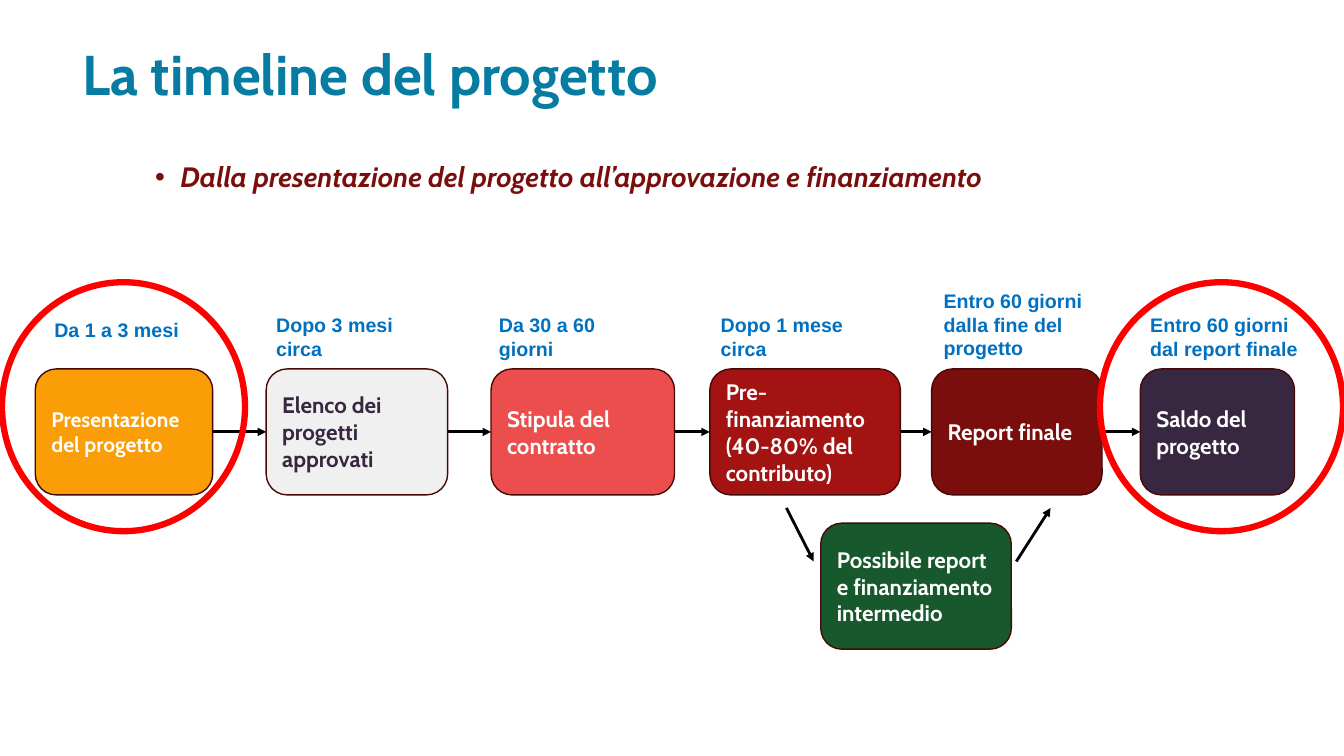
import pptx
import pptx.util
import pptx.dml.color
import pptx.enum.shapes
import pptx.enum.text
import pptx.oxml.xmlchemy

Inches = pptx.util.Inches
Pt = pptx.util.Pt
SHAPE = pptx.enum.shapes.MSO_SHAPE
ANCHOR = pptx.enum.text.MSO_ANCHOR

COLORS = {
    "title": "067CA2", "crimson": "7A0E0D", "orange": "FA9D06", "grey": "F1F0F0",
    "coral": "EB4E4D", "red": "A31312", "plum": "372741", "green": "17582C",
    "white": "FFFFFF", "outline": "470808", "label": "0070C0", "arrow": "000000",
    "ring": "FF0000",
}

TITLE = "La timeline del progetto"
SUBTITLE = "Dalla presentazione del progetto all’approvazione e finanziamento"

STEPS = [
    (["Presentazione del progetto"], 0.35, 1.76, "orange", "white", 15),
    (["Elenco dei progetti approvati"], 2.64, 1.8, "grey", "plum", 16),
    (["Stipula del contratto"], 4.87, 1.82, "coral", "white", 16),
    (["Pre-", "finanziamento (40-80% del contributo)"], 7.04, 1.89, "red", "white", 16),
    (["Report finale"], 9.24, 1.69, "crimson", "white", 16),
    (["Saldo del progetto"], 11.31, 1.53, "plum", "white", 16),
]
INTERIM = (["Possibile report e finanziamento intermedio"], 8.14, 1.89, "green", "white", 16)
TIMINGS = [
    ("Da 1 a 3 mesi", 0.44, 3.45, 1),
    ("Dopo 3 mesi circa", 2.64, 3.64, 2),
    ("Da 30 a 60 giorni", 4.85, 3.64, 2),
    ("Dopo 1 mese circa", 7.05, 3.64, 2),
    ("Entro 60 giorni dalla fine del progetto", 9.26, 3.64, 3),
    ("Entro 60 giorni dal report finale", 11.31, 3.64, 2),
]
DETOUR = [((7.8, 5.04), (8.07, 5.57)), ((10.08, 5.57), (10.42, 5.04))]
RING_LEFTS = [0.02, 10.91]

STEP_TOP, INTERIM_TOP, STEP_HEIGHT = 3.66, 5.19, 1.25
TIMING_WIDTH, TIMING_LINE, TIMING_PADDING = 1.69, 0.24, 0.1
RING_TOP, RING_WIDTH, RING_HEIGHT = 2.8, 2.41, 2.47

TITLE_FONT = {"name": "Cabin", "size": Pt(40), "bold": True}
SUBTITLE_FONT = {"name": "Cabin", "size": Pt(20), "bold": True, "italic": True}
TIMING_FONT = {"name": "Arial", "size": Pt(14), "bold": True}


def rgb(color):
    return pptx.dml.color.RGBColor.from_string(COLORS[color])


def element(tag, **attributes):
    made = pptx.oxml.xmlchemy.OxmlElement(tag)
    for key, value in attributes.items():
        made.set(key, value)
    return made


def write(frame, lines, font, color, anchor):
    frame.word_wrap = True
    frame.vertical_anchor = anchor
    for index, line in enumerate(lines):
        paragraph = frame.paragraphs[0] if index == 0 else frame.add_paragraph()
        paragraph.alignment = pptx.enum.text.PP_ALIGN.LEFT
        run = paragraph.add_run()
        run.text = line
        for key, value in font.items():
            setattr(run.font, key, value)
        run.font.color.rgb = rgb(color)


def add_text(slide, box, text, font, color, anchor=ANCHOR.TOP):
    frame = slide.shapes.add_textbox(*map(Inches, box)).text_frame
    write(frame, [text], font, color, anchor)
    return frame.paragraphs[0]


def add_outlined(slide, kind, box, color, width):
    shape = slide.shapes.add_shape(kind, *map(Inches, box))
    shape.shadow.inherit = False
    shape.line.color.rgb = rgb(color)
    shape.line.width = Pt(width)
    return shape


def add_step(slide, step, top):
    lines, left, width, fill, ink, size = step
    box = (left, top, width, STEP_HEIGHT)
    shape = add_outlined(slide, SHAPE.ROUNDED_RECTANGLE, box, "outline", 1)
    shape.fill.solid()
    shape.fill.fore_color.rgb = rgb(fill)
    font = {"name": "Cabin", "size": Pt(size), "bold": True}
    write(shape.text_frame, lines, font, ink, ANCHOR.MIDDLE)


def add_arrow(slide, start, end):
    arrow = slide.shapes.add_connector(
        pptx.enum.shapes.MSO_CONNECTOR.STRAIGHT, *map(Inches, start + end))
    arrow.line.color.rgb = rgb("arrow")
    arrow.line.width = Pt(2)
    arrow.get_or_add_ln().append(element("a:tailEnd", type="triangle"))
    arrow._element.spPr.append(element("a:effectLst"))


def add_bullet(paragraph):
    properties = paragraph._p.get_or_add_pPr()
    properties.set("marL", str(Inches(0.25)))
    properties.set("indent", str(Inches(-0.25)))
    properties.append(element("a:buFont", typeface="Arial"))
    properties.append(element("a:buChar", char="•"))


def main():
    deck = pptx.Presentation()
    deck.slide_width, deck.slide_height = Inches(13.33), Inches(7.5)
    slide = deck.slides.add_slide(deck.slide_layouts[6])

    heading = add_text(slide, (0.72, 0.41, 11.58, 0.71), TITLE, TITLE_FONT, "title", ANCHOR.MIDDLE)
    subtitle = add_text(slide, (1.44, 1.57, 10, 0.57), SUBTITLE, SUBTITLE_FONT, "crimson")
    add_bullet(subtitle)
    for paragraph in (heading, subtitle):
        paragraph.line_spacing = 0.9

    for step in STEPS:
        add_step(slide, step, STEP_TOP)
    for text, left, bottom, lines in TIMINGS:
        height = TIMING_PADDING + TIMING_LINE * lines
        add_text(slide, (left, bottom - height, TIMING_WIDTH, height), text, TIMING_FONT, "label")

    middle = STEP_TOP + STEP_HEIGHT / 2
    for (_, left, width, *_), (_, following, *_) in zip(STEPS, STEPS[1:]):
        add_arrow(slide, (left + width, middle), (following, middle))

    for left in RING_LEFTS:
        box = (left, RING_TOP, RING_WIDTH, RING_HEIGHT)
        add_outlined(slide, SHAPE.OVAL, box, "ring", 4.5).fill.background()

    add_step(slide, INTERIM, INTERIM_TOP)
    for start, end in DETOUR:
        add_arrow(slide, start, end)

    deck.save("out.pptx")


if __name__ == "__main__":
    main()
